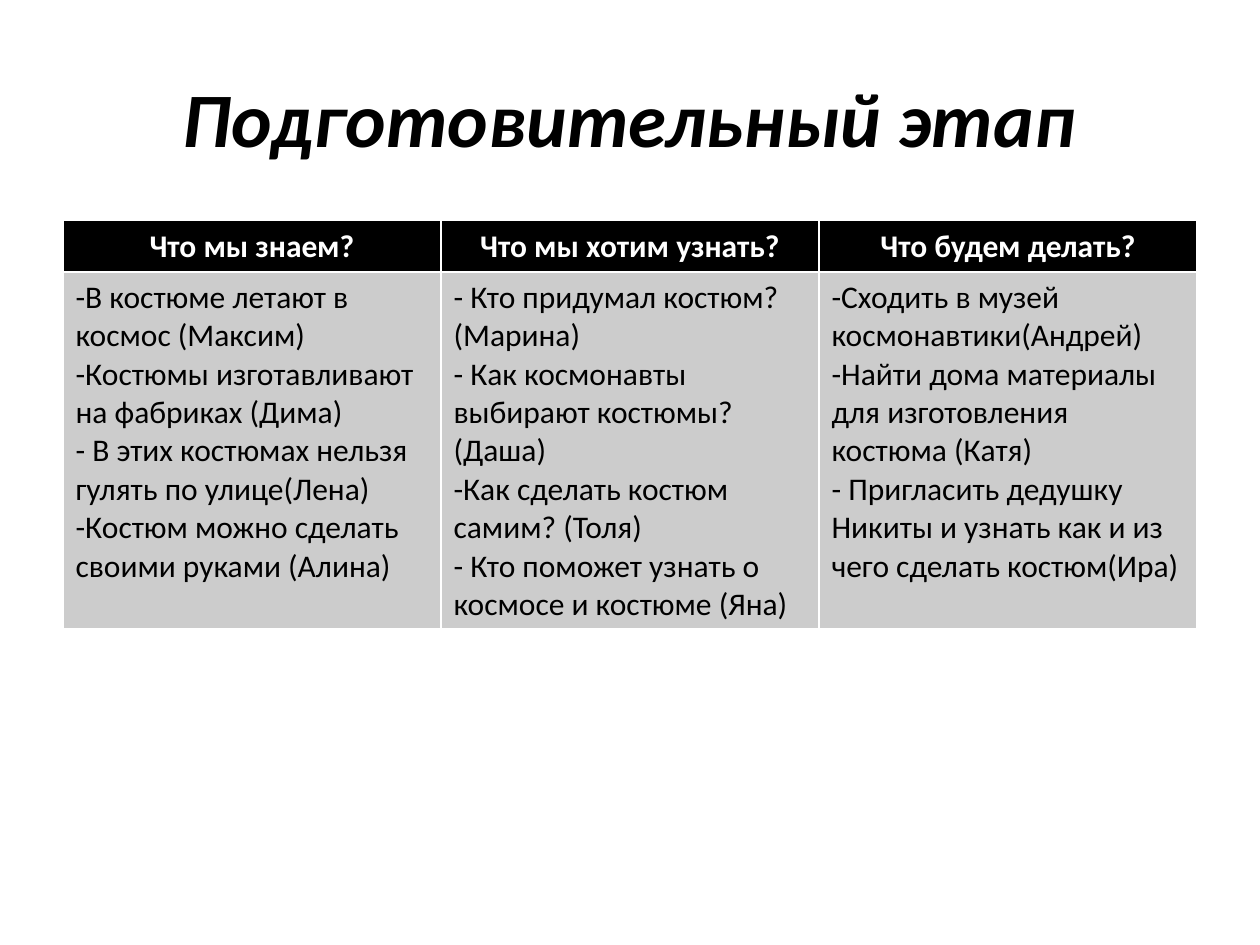
from pptx import Presentation
from pptx.dml.color import RGBColor
from pptx.enum.text import MSO_ANCHOR, PP_ALIGN
from pptx.util import Cm, Pt

CENTER, LEFT = PP_ALIGN.CENTER, PP_ALIGN.LEFT
MIDDLE = MSO_ANCHOR.MIDDLE
BLACK = RGBColor(0x00, 0x00, 0x00)
WHITE = RGBColor(0xFF, 0xFF, 0xFF)
GREY = RGBColor(0xCC, 0xCC, 0xCC)
FONT = "Calibri"

TITLE = "Подготовительный этап"
COLUMNS = [
    ("Что мы знаем?", [
        "-В костюме летают в космос (Максим)",
        "-Костюмы изготавливают на фабриках (Дима)",
        "- В этих костюмах нельзя гулять по улице(Лена)",
        "-Костюм можно сделать своими руками (Алина)",
    ]),
    ("Что мы хотим узнать?", [
        "- Кто придумал костюм? (Марина)",
        "- Как космонавты выбирают костюмы? (Даша)",
        "-Как сделать костюм самим? (Толя)",
        "- Кто поможет узнать о космосе и костюме (Яна)",
    ]),
    ("Что будем делать?", [
        "-Сходить в музей космонавтики(Андрей)",
        "-Найти дома материалы для изготовления костюма (Катя)",
        "- Пригласить дедушку Никиты и узнать как и из чего сделать костюм(Ира)",
    ]),
]

MARGIN, WIDTH = Cm(1.27), Cm(22.86)
HEADER_H, BODY_H = Cm(1.03), Cm(7.2)


def write(tf, lines, size, color, align, bold=False, italic=False):
    tf.text = "\n".join(lines)
    for p in tf.paragraphs:
        p.alignment = align
        f = p.font
        f.name, f.size, f.bold, f.italic = FONT, Pt(size), bold, italic
        f.color.rgb = color


def fill_cell(cell, lines, fill, color, align, bold):
    cell.fill.solid()
    cell.fill.fore_color.rgb = fill
    write(cell.text_frame, lines, 18, color, align, bold)


prs = Presentation()
prs.slide_width, prs.slide_height = Cm(25.4), Cm(19.05)
s = prs.slides.add_slide(prs.slide_layouts[6])

tf = s.shapes.add_textbox(MARGIN, Cm(0.76), WIDTH, Cm(3.18)).text_frame
tf.word_wrap = True
tf.vertical_anchor = MIDDLE
write(tf, [TITLE], 44, BLACK, CENTER, bold=True, italic=True)

# The default table style supplies the white rules between cells.
table = s.shapes.add_table(2, len(COLUMNS), MARGIN, Cm(4.45), WIDTH,
                           HEADER_H + BODY_H).table
table.horz_banding = False
table.rows[0].height, table.rows[1].height = HEADER_H, BODY_H
for i, (question, answers) in enumerate(COLUMNS):
    fill_cell(table.cell(0, i), [question], BLACK, WHITE, CENTER, True)
    fill_cell(table.cell(1, i), answers, GREY, BLACK, LEFT, False)

prs.save("out.pptx")
